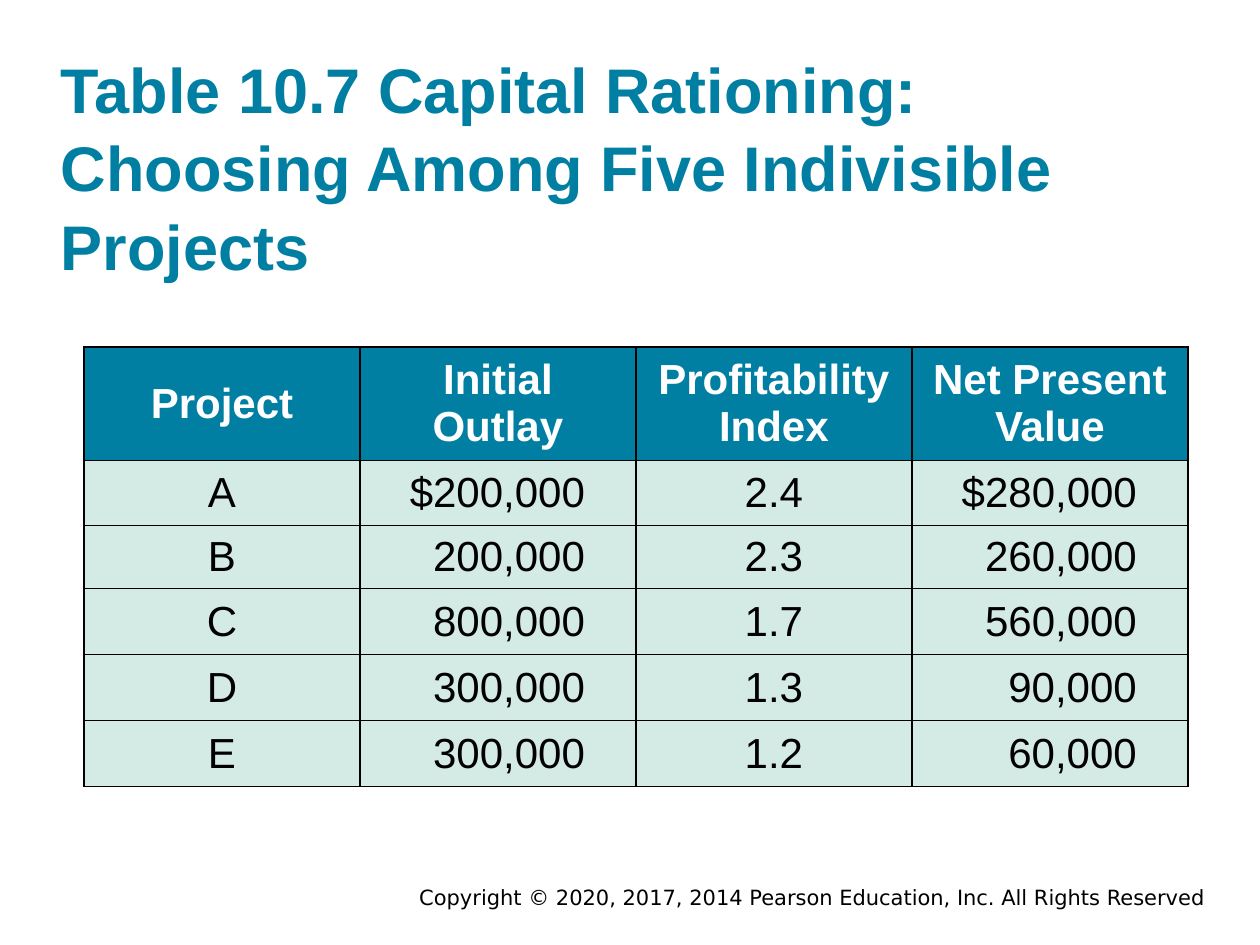
from lxml.etree import SubElement
from pptx import Presentation
from pptx.dml.color import RGBColor
from pptx.enum.text import MSO_ANCHOR as ANCHOR, PP_ALIGN as ALIGN
from pptx.oxml.ns import qn
from pptx.util import Pt

PX = 914400 / 126
TEAL = RGBColor(0x00, 0x7F, 0xA3)
MINT = RGBColor(0xD4, 0xEA, 0xE4)
WHITE = RGBColor(0xFF, 0xFF, 0xFF)
BLACK = RGBColor(0x00, 0x00, 0x00)

ROWS = [
    ("Project", "Initial Outlay", "Profitability Index", "Net Present Value"),
    ("A", "$200,000", "2.4", "$280,000"),
    ("B", "200,000", "2.3", "260,000"),
    ("C", "800,000", "1.7", "560,000"),
    ("D", "300,000", "1.3", "90,000"),
    ("E", "300,000", "1.2", "60,000"),
]
ROW_HEIGHTS = [113, 65, 63, 66, 66, 66]
COL_WIDTH = 276
MONEY_COLS = (1, 3)
MONEY_MARGIN = 51


def px(*values):
    return [round(v * PX) for v in values]


def add_run(p, text, size, color, font="Arial", bold=False):
    r = p.add_run()
    r.text = text
    r.font.name = font
    r.font.size = Pt(size)
    r.font.bold = bold
    r.font.color.rgb = color


prs = Presentation()
prs.slide_width, prs.slide_height = px(1260, 945)
s = prs.slides.add_slide(prs.slide_layouts[6])

tf = s.shapes.add_textbox(*px(232, 878, 986, 38)).text_frame
tf.word_wrap = True
p = tf.paragraphs[0]
p.alignment = ALIGN.RIGHT
add_run(p, "Copyright © 2020, 2017, 2014 Pearson Education, Inc. All Rights Reserved",
        12, BLACK, "DejaVu Sans")

tf = s.shapes.add_textbox(*px(61, 54, 1146, 229)).text_frame
tf.word_wrap = True
tf.vertical_anchor = ANCHOR.BOTTOM
tf.margin_left = tf.margin_right = tf.margin_top = tf.margin_bottom = 0
p = tf.paragraphs[0]
p.line_spacing = 1.04
add_run(p, "Table 10.7 Capital Rationing: Choosing Among Five Indivisible Projects",
        36, TEAL, bold=True)

n_cols = len(ROWS[0])
box = px(84, 347, COL_WIDTH * n_cols, sum(ROW_HEIGHTS))
table = s.shapes.add_table(len(ROWS), n_cols, *box).table
table.horz_banding = False
for col in table.columns:
    col.width = px(COL_WIDTH)[0]

for i, (values, height) in enumerate(zip(ROWS, ROW_HEIGHTS)):
    table.rows[i].height = px(height)[0]
    header = i == 0
    for j, value in enumerate(values):
        cell = table.cell(i, j)
        cell.vertical_anchor = ANCHOR.MIDDLE
        p = cell.text_frame.paragraphs[0]
        p.alignment = ALIGN.CENTER
        if j in MONEY_COLS and not header:
            p.alignment = ALIGN.RIGHT
            cell.margin_right = px(MONEY_MARGIN)[0]
        add_run(p, value, 24, WHITE if header else BLACK, bold=header)
        tc_pr = cell._tc.get_or_add_tcPr()
        for side in ("a:lnL", "a:lnR", "a:lnT", "a:lnB"):
            ln = SubElement(tc_pr, qn(side), w=str(Pt(1)))
            fill = SubElement(ln, qn("a:solidFill"))
            SubElement(fill, qn("a:srgbClr"), val=str(BLACK))
        cell.fill.solid()
        cell.fill.fore_color.rgb = TEAL if header else MINT

prs.save("out.pptx")
